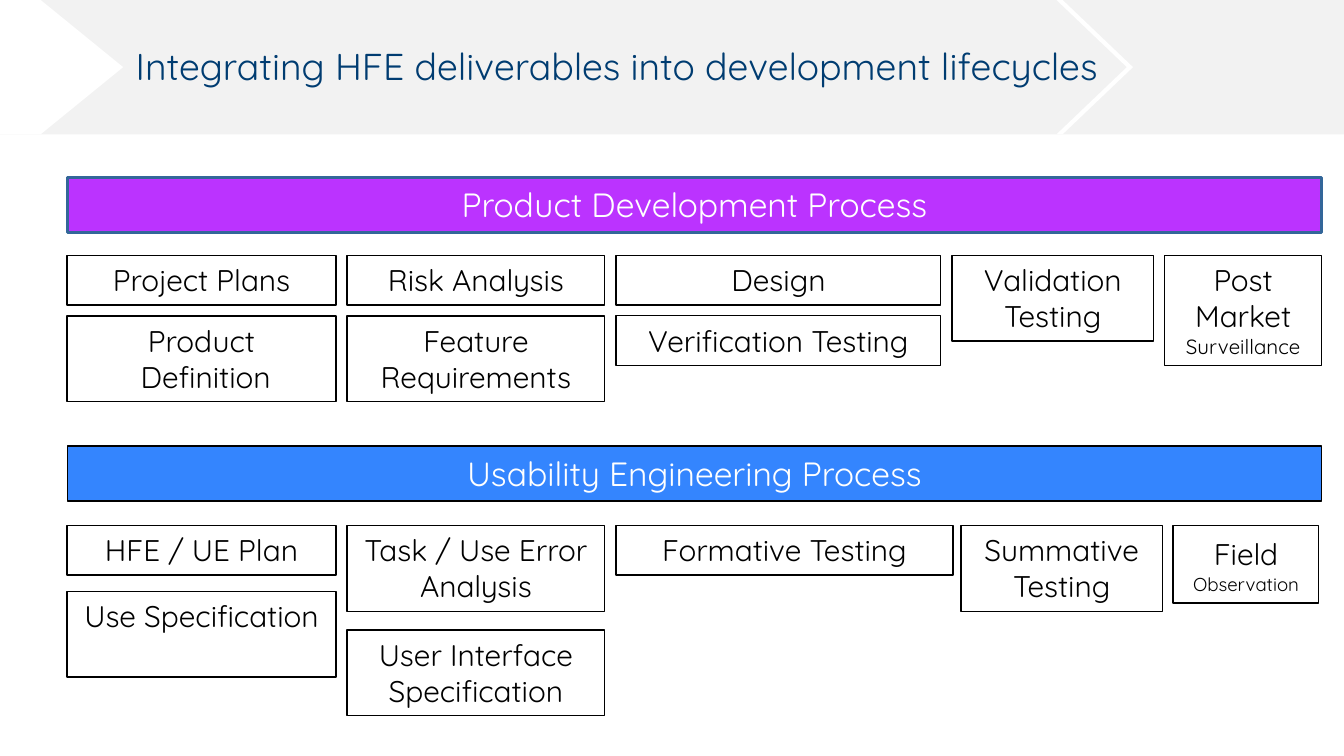
from pptx import Presentation
from pptx import util as u
from pptx.dml.color import RGBColor
from pptx.enum import shapes, text

Pt = u.Pt
FONT = "Quicksand"


def color(hex_value):
    return RGBColor.from_string(hex_value)


def add_box(s, kind, x, y, w, h, fill=None, line=None, weight=0.75):
    sp = s.shapes.add_shape(kind, Pt(x), Pt(y), Pt(w), Pt(h))
    sp.shadow.inherit = False
    if fill:
        sp.fill.solid()
        sp.fill.fore_color.rgb = color(fill)
    else:
        sp.fill.background()
    if line:
        sp.line.color.rgb = color(line)
        sp.line.width = Pt(weight)
    else:
        sp.line.fill.background()
    tf = sp.text_frame
    tf.word_wrap = True
    tf.vertical_anchor = text.MSO_ANCHOR.TOP
    return sp


prs = Presentation()
prs.slide_width, prs.slide_height = Pt(720), Pt(405)
s = prs.slides.add_slide(prs.slide_layouts[5])
kinds = shapes.MSO_SHAPE

add_box(s, kinds.RECTANGLE, 0, 0, 720, 72, "F2F2F2")
chevron = add_box(s, kinds.CHEVRON, 566, 0, 41, 72, "FFFFFF")
chevron.adjustments[0] = 0.92
pentagon = add_box(s, kinds.PENTAGON, 0, 0, 66, 72, "FFFFFF")
pentagon.adjustments[0] = 0.67

title = s.shapes.title
title.left, title.top, title.width, title.height = Pt(65.5), Pt(17), Pt(613), Pt(39.6)
s.shapes._spTree.append(title._element)
tf = title.text_frame
tf.text = "Integrating HFE deliverables into development lifecycles"
tf.word_wrap = True
tf.vertical_anchor = text.MSO_ANCHOR.MIDDLE
p = tf.paragraphs[0]
p.alignment = text.PP_ALIGN.LEFT
p.line_spacing = 0.9
p.font.name, p.font.size = FONT, Pt(20)
p.font.color.rgb = color("003C71")

banners = [
    ("Product Development Process", 95, "BB33FF", "336699", 1.5),
    ("Usability Engineering Process", 239, "3485FE", "000000", 0.75),
]
for label, y, fill, line, weight in banners:
    sp = add_box(s, kinds.RECTANGLE, 36, y, 672, 29.4, fill, line, weight)
    p = sp.text_frame.paragraphs[0]
    p.text = label
    p.alignment = text.PP_ALIGN.CENTER
    p.font.name, p.font.size = FONT, Pt(18)
    p.font.color.rgb = color("FFFFFF")

ONE_LINE, TWO_LINES = 26.6, 46
PLAN, ANALYSIS, DESIGN = (36, 144), (186, 138), (330, 174)
TOP, SECOND, LOWER = 136.8, 169.2, 281.5
boxes = [
    (PLAN, TOP, ONE_LINE, [[("Project Plans", 16)]]),
    (PLAN, SECOND, TWO_LINES, [[("Product", 16)], [(" Definition", 16)]]),
    (ANALYSIS, TOP, ONE_LINE, [[("Risk Analysis", 16)]]),
    (ANALYSIS, SECOND, TWO_LINES, [[("Feature Requirements", 16)]]),
    (DESIGN, TOP, ONE_LINE, [[("Design", 16)]]),
    (DESIGN, SECOND, ONE_LINE, [[("Verification Testing", 16)]]),
    ((510, 108), TOP, TWO_LINES, [[("Validation Testing", 16)]]),
    ((624, 84), TOP, 59, [[("Post Market ", 16), ("Surveillance", 11)]]),
    (PLAN, LOWER, ONE_LINE, [[("HFE / UE Plan", 16)]]),
    (PLAN, 316.8, TWO_LINES, [[("Use Specification", 16)]]),
    (ANALYSIS, LOWER, TWO_LINES, [[("Task / Use Error Analysis", 16)]]),
    (ANALYSIS, 337.5, TWO_LINES, [[("User Interface Specification", 16)]]),
    ((330, 180.5), LOWER, ONE_LINE, [[("Formative Testing", 16)]]),
    ((514.8, 108), LOWER, TWO_LINES, [[("Summative Testing", 16)]]),
    ((628.5, 78), LOWER, 41.5, [[("Field", 16), (" ", 18), ("Observation", 10)]]),
]
for (x, w), y, h, paragraphs in boxes:
    tf = add_box(s, kinds.RECTANGLE, x, y, w, h, line="000000").text_frame
    for i, runs in enumerate(paragraphs):
        p = tf.add_paragraph() if i else tf.paragraphs[0]
        p.alignment = text.PP_ALIGN.CENTER
        p.font.name = FONT
        p.font.color.rgb = color("000000")
        if len(runs) == 1:
            p.font.size = Pt(runs[0][1])
        for label, size in runs:
            r = p.add_run()
            r.text = label
            if len(runs) > 1:
                r.font.size = Pt(size)

prs.save("out.pptx")
